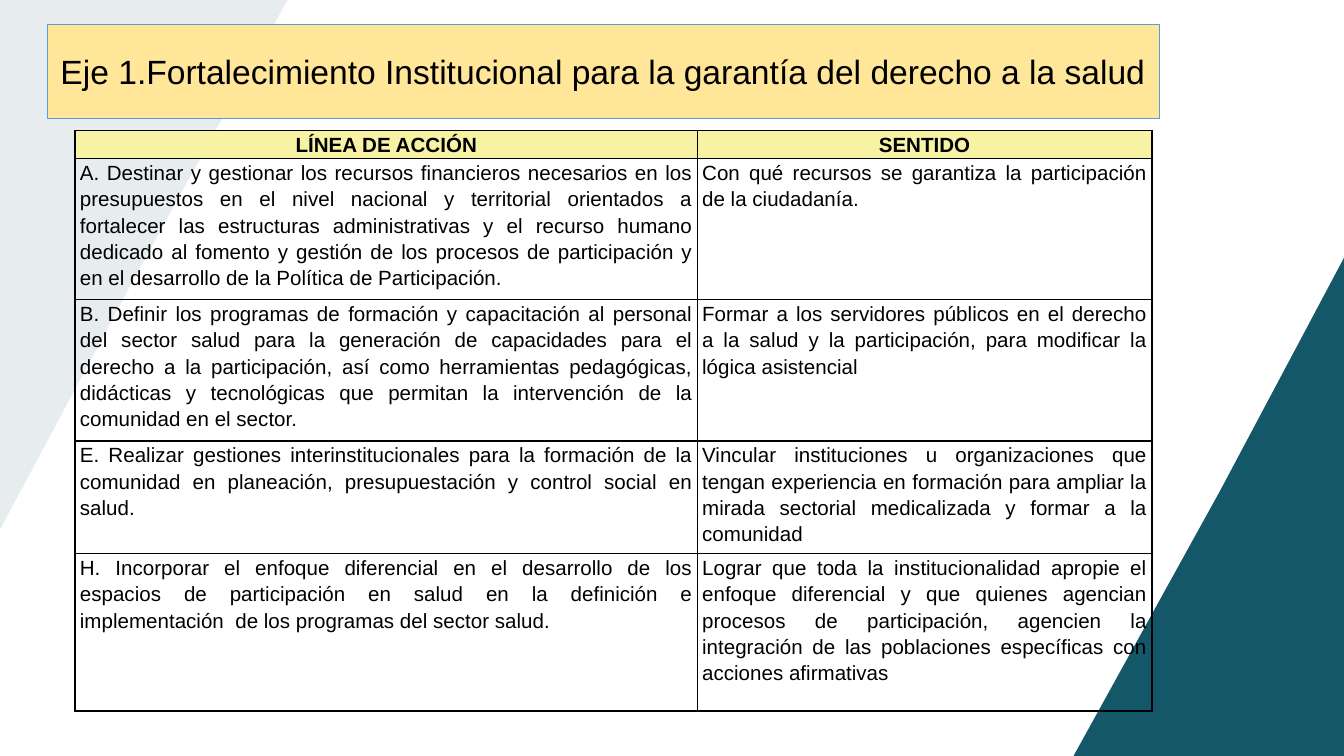
from dataclasses import dataclass

from lxml.etree import SubElement
from pptx import Presentation
from pptx.dml.color import RGBColor as RGB
from pptx.enum.text import MSO_ANCHOR as Anchor, MSO_AUTO_SIZE as Fit, PP_ALIGN as Align
from pptx.oxml.ns import qn
from pptx.util import Inches, Pt


@dataclass(frozen=True)
class Theme:
    font: str = "Arial"
    ink: RGB = RGB(0x00, 0x00, 0x00)
    teal: RGB = RGB(0x14, 0x57, 0x68)
    gold: RGB = RGB(0xFF, 0xE6, 0x99)
    edge: RGB = RGB(0x5B, 0x9B, 0xD5)
    head: RGB = RGB(0xF8, 0xF2, 0xA4)
    title: Pt = Pt(18)
    body: Pt = Pt(11)


THEME = Theme()
TITLE = "Eje 1.Fortalecimiento Institucional para la garantía del derecho a la salud"
COLS = [4.63, 3.38]
ROWS = [
    (0.21, "LÍNEA DE ACCIÓN", "SENTIDO"),
    (1.05, "A. Destinar y gestionar los recursos financieros necesarios en los presupuestos "
           "en el nivel nacional y territorial orientados a fortalecer las estructuras "
           "administrativas y el recurso humano dedicado al fomento y gestión de los procesos "
           "de participación y en el desarrollo de la Política de Participación.",
     "Con qué recursos se garantiza la participación de la ciudadanía."),
    (1.05, "B. Definir los programas de formación y capacitación al personal del sector salud "
           "para la generación de capacidades para el derecho a la participación, así como "
           "herramientas pedagógicas, didácticas y tecnológicas que permitan la intervención "
           "de la comunidad en el sector.",
     "Formar a los servidores públicos en el derecho a la salud y la participación, "
     "para modificar la lógica asistencial"),
    (0.84, "E. Realizar gestiones interinstitucionales para la formación de la comunidad en "
           "planeación, presupuestación y control social en salud.",
     "Vincular instituciones u organizaciones que tengan experiencia en formación para "
     "ampliar la mirada sectorial medicalizada y formar a la comunidad"),
    (1.17, "H. Incorporar el enfoque diferencial en el desarrollo de los espacios de "
           "participación en salud en la definición e implementación  de los programas del "
           "sector salud.",
     "Lograr que toda la institucionalidad apropie el enfoque diferencial y que quienes "
     "agencian procesos de participación, agencien la integración de las poblaciones "
     "específicas con acciones afirmativas"),
]


def style(para, size, bold=False):
    font = para.font
    font.name, font.size, font.bold = THEME.font, size, bold
    font.color.rgb = THEME.ink


def add_wedge(slide, points, alpha=100):
    """Draw a corner wedge; alpha is its opacity in percent."""
    start, *rest = [(Inches(x), Inches(y)) for x, y in points]
    pen = slide.shapes.build_freeform(*start)
    pen.add_line_segments(rest)
    wedge = pen.convert_to_shape()
    wedge.shadow.inherit = False
    wedge.line.fill.background()
    wedge.fill.solid()
    wedge.fill.fore_color.rgb = THEME.teal
    if alpha < 100:
        color = wedge.fill._xPr.find(qn("a:solidFill"))[0]
        SubElement(color, qn("a:alpha"), val=str(alpha * 1000))


def set_title(slide):
    title = slide.shapes.title
    title.left, title.top = Inches(0.35), Inches(0.18)
    title.width, title.height = Inches(8.28), Inches(0.7)
    title.fill.solid()
    title.fill.fore_color.rgb = THEME.gold
    title.line.color.rgb = THEME.edge
    title.line.width = Pt(0.5)
    frame = title.text_frame
    frame.text = TITLE
    frame.word_wrap = True
    frame.auto_size = Fit.NONE
    frame.vertical_anchor = Anchor.MIDDLE
    para = frame.paragraphs[0]
    para.alignment = Align.LEFT
    style(para, THEME.title)


def add_borders(cell):
    props = cell._tc.get_or_add_tcPr()
    for side in "LRTB":
        line = SubElement(props, qn(f"a:ln{side}"), w=str(Pt(1)))
        fill = SubElement(line, qn("a:solidFill"))
        SubElement(fill, qn("a:srgbClr"), val=str(THEME.ink))


def fill_cell(cell, text, head):
    cell.margin_left = cell.margin_right = Pt(2.5)
    cell.margin_top = cell.margin_bottom = 0
    add_borders(cell)
    if head:
        cell.fill.solid()
        cell.fill.fore_color.rgb = THEME.head
    else:
        cell.fill.background()
    cell.text = text
    para = cell.text_frame.paragraphs[0]
    para.alignment = Align.CENTER if head else Align.JUSTIFY
    para.line_spacing = 1.15
    para.space_after = Pt(10)
    style(para, THEME.body, head)


def add_grid(slide):
    table = slide.shapes.add_table(
        len(ROWS), len(COLS), Inches(0.56), Inches(0.97),
        Inches(sum(COLS)), Inches(sum(row[0] for row in ROWS))).table
    table.first_row = table.horz_banding = False
    for col, width in zip(table.columns, COLS):
        col.width = Inches(width)
    for i, (height, *texts) in enumerate(ROWS):
        table.rows[i].height = Inches(height)
        for j, text in enumerate(texts):
            fill_cell(table.cell(i, j), text, head=i == 0)


def main():
    deck = Presentation()
    deck.slide_width, deck.slide_height = Inches(10), Inches(10 * 9 / 16)
    slide = deck.slides.add_slide(deck.slide_layouts[5])
    add_wedge(slide, [(9.08, 3.65), (10.09, 1.75), (10.08, 5.72), (7.93, 5.73)])
    add_wedge(slide, [(1, 2.07), (-0.01, 3.96), (0, -0.01), (2.15, -0.02)], alpha=10)
    # The title lies above the wedges
    slide.shapes._spTree.append(slide.shapes.title._element)
    set_title(slide)
    add_grid(slide)
    deck.save("out.pptx")


if __name__ == "__main__":
    main()
